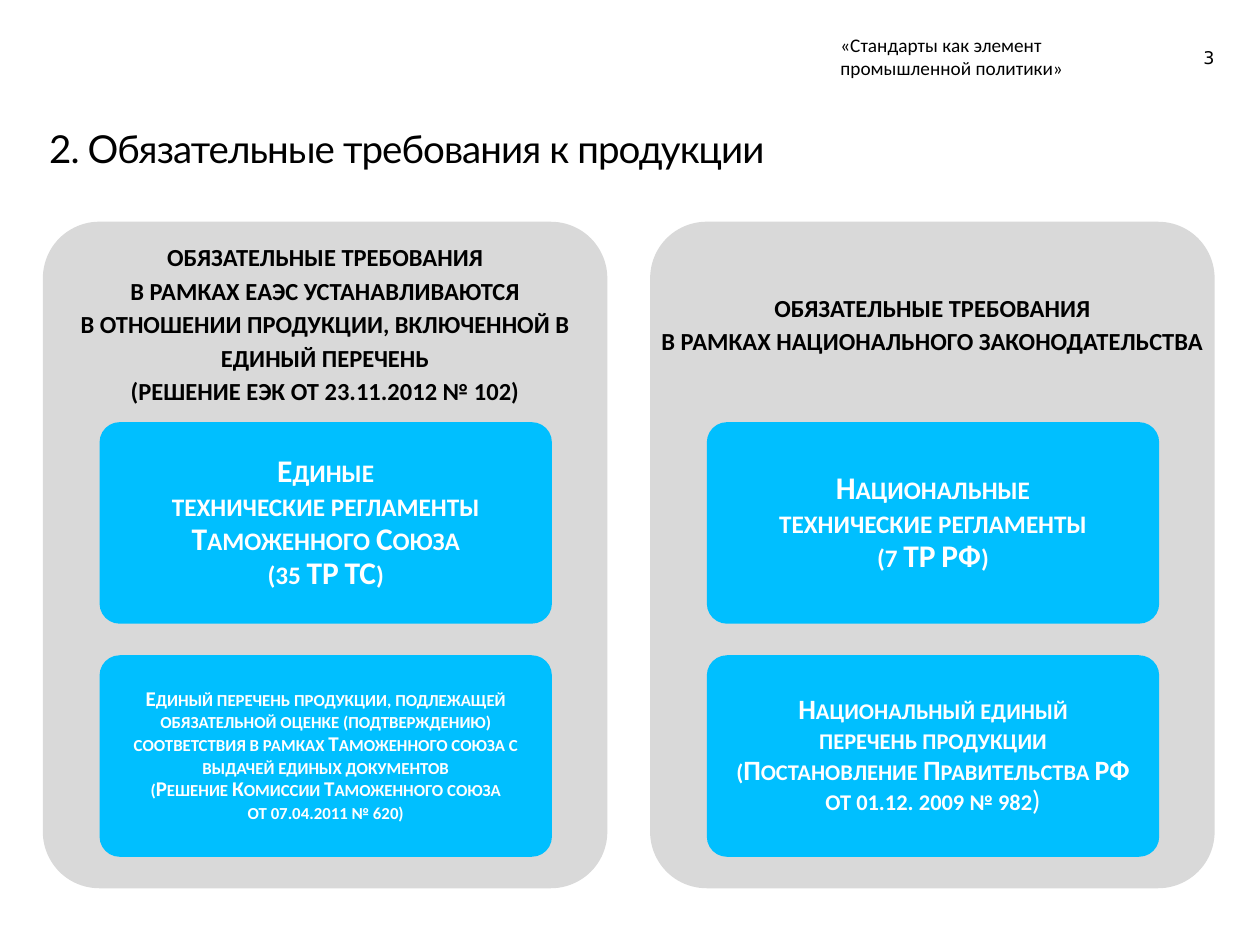
"""Builds the slide on mandatory product requirements."""
from pptx import Presentation
from pptx import util as u
from pptx.dml.color import RGBColor
from pptx.enum import shapes, text


def color(code):
    """Turn a hex string into a colour."""
    return RGBColor.from_string(code)


class Page:
    """Hold the style and the slide; lengths are percentages of the slide's size."""

    INK, PANEL, CARD, PAPER = "000000", "D9D9D9", "00BFFF", "FFFFFF"
    FONT = "Calibri"

    def __init__(self, deck):
        """Add a title-only slide to the deck."""
        self.deck = deck
        self.slide = deck.slides.add_slide(deck.slide_layouts[5])

    def place(self, left, top, width, height):
        """Convert percentages to slide lengths."""
        across, down = self.deck.slide_width / 100, self.deck.slide_height / 100
        return [u.Emu(round(length)) for length in
                (left * across, top * down, width * across, height * down)]

    def format_span(self, span, size, ink=INK, font=FONT, bold=False):
        """Set the font of a run."""
        span.font.name, span.font.size = font, u.Pt(size)
        span.font.bold = bold
        span.font.color.rgb = color(ink)

    def set_text(self, box, lines, size, align="LEFT", anchor="TOP", spacing=None,
                 inset=0, small_caps=False, **font_style):
        """Fill a box with one paragraph per line."""
        frame = box.text_frame
        frame.word_wrap = True
        frame.auto_size = text.MSO_AUTO_SIZE.NONE
        frame.vertical_anchor = text.MSO_ANCHOR[anchor]
        frame.margin_left = frame.margin_right = u.Inches(inset)
        frame.margin_top = frame.margin_bottom = u.Inches(inset)
        frame.text = "\n".join(lines)
        for para in frame.paragraphs:
            para.alignment = text.PP_ALIGN[align]
            para.line_spacing = spacing
            for span in para.runs:
                self.format_span(span, size, **font_style)
                if small_caps:
                    span.font._element.set("cap", "small")
        return frame

    def title(self, place, line):
        """Move and format the title placeholder."""
        box = self.slide.shapes.title
        box.left, box.top, box.width, box.height = self.place(*place)
        frame = self.set_text(box, [line], 22, font="Lato")
        frame.paragraphs[0].runs[0].font._element.set("spc", "-50")

    def label(self, place, lines, size, **style):
        """Add a text box."""
        box = self.slide.shapes.add_textbox(*self.place(*place))
        return self.set_text(box, lines, size, **style)

    def block(self, place, fill):
        """Add a rounded rectangle without an outline."""
        box = self.slide.shapes.add_shape(
            shapes.MSO_SHAPE.ROUNDED_RECTANGLE, *self.place(*place))
        box.adjustments[0] = 0.1
        box.shadow.inherit = False
        box.fill.solid()
        box.fill.fore_color.rgb = color(fill)
        box.line.fill.background()
        return box

    def card(self, place, lines, size):
        """Add a blue card with small-caps text."""
        return self.set_text(self.block(place, self.CARD), lines, size, ink=self.PAPER,
                             bold=True, align="CENTER", anchor="MIDDLE", spacing=0.9,
                             inset=0.04, small_caps=True)

    def panel(self, left, heading, cards):
        """Add a grey panel with its heading and stacked cards."""
        top, width = 23.47, 44.8
        self.block((left, top, width, 70.53), self.PANEL)
        self.label((left, top, width, 21.2), heading, 14, bold=True, align="CENTER",
                   anchor="MIDDLE", spacing=1.14, inset=0.06)
        return [self.card((left + 4.5, 44.67 + row * 24.67, 35.9, 21.33), lines, size)
                for row, (size, lines) in enumerate(cards)]


UNION = (
    ["ОБЯЗАТЕЛЬНЫЕ ТРЕБОВАНИЯ", "В РАМКАХ ЕАЭС УСТАНАВЛИВАЮТСЯ",
     "В ОТНОШЕНИИ ПРОДУКЦИИ, ВКЛЮЧЕННОЙ В ЕДИНЫЙ ПЕРЕЧЕНЬ",
     "(РЕШЕНИЕ ЕЭК ОТ 23.11.2012 № 102)"],
    [(18, ["Единые", "технические регламенты", "Таможенного Союза", "(35 ТР ТС)"]),
     (12, ["Единый перечень продукции, подлежащей обязательной оценке (подтверждению) "
           "соответствия в рамках Таможенного союза с выдачей единых документов",
           "(Решение Комиссии Таможенного союза", "от 07.04.2011 № 620)"])])
NATIONAL = (
    ["ОБЯЗАТЕЛЬНЫЕ ТРЕБОВАНИЯ", "В РАМКАХ НАЦИОНАЛЬНОГО ЗАКОНОДАТЕЛЬСТВА"],
    [(18, ["Национальные", "технические регламенты", "(7 ТР РФ)"]),
     (16, ["Национальный единый", "перечень продукции",
           "(Постановление Правительства РФ", "от 01.12. 2009 № 982"])])


def main():
    """Build and save the deck."""
    deck = Presentation()
    deck.slide_width, deck.slide_height = u.Inches(10), u.Inches(7.5)
    page = Page(deck)
    page.label((93.1, 4.93, 3.3, 2.27), ["3"], 10, font="DejaVu Sans", align="RIGHT")
    page.title((3.9, 13.2, 92.2, 5.33), "2. Обязательные требования к продукции")
    page.label((66.7, 3.47, 25.6, 4.93),
               ["«Стандарты как элемент промышленной политики»"], 11)
    page.panel(3.4, *UNION)
    decree = page.panel(51.6, *NATIONAL)[-1].paragraphs[-1]
    bracket = decree.add_run()
    bracket.text = ")"
    page.format_span(bracket, 16, ink=page.PAPER)
    deck.save("out.pptx")


if __name__ == "__main__":
    main()
